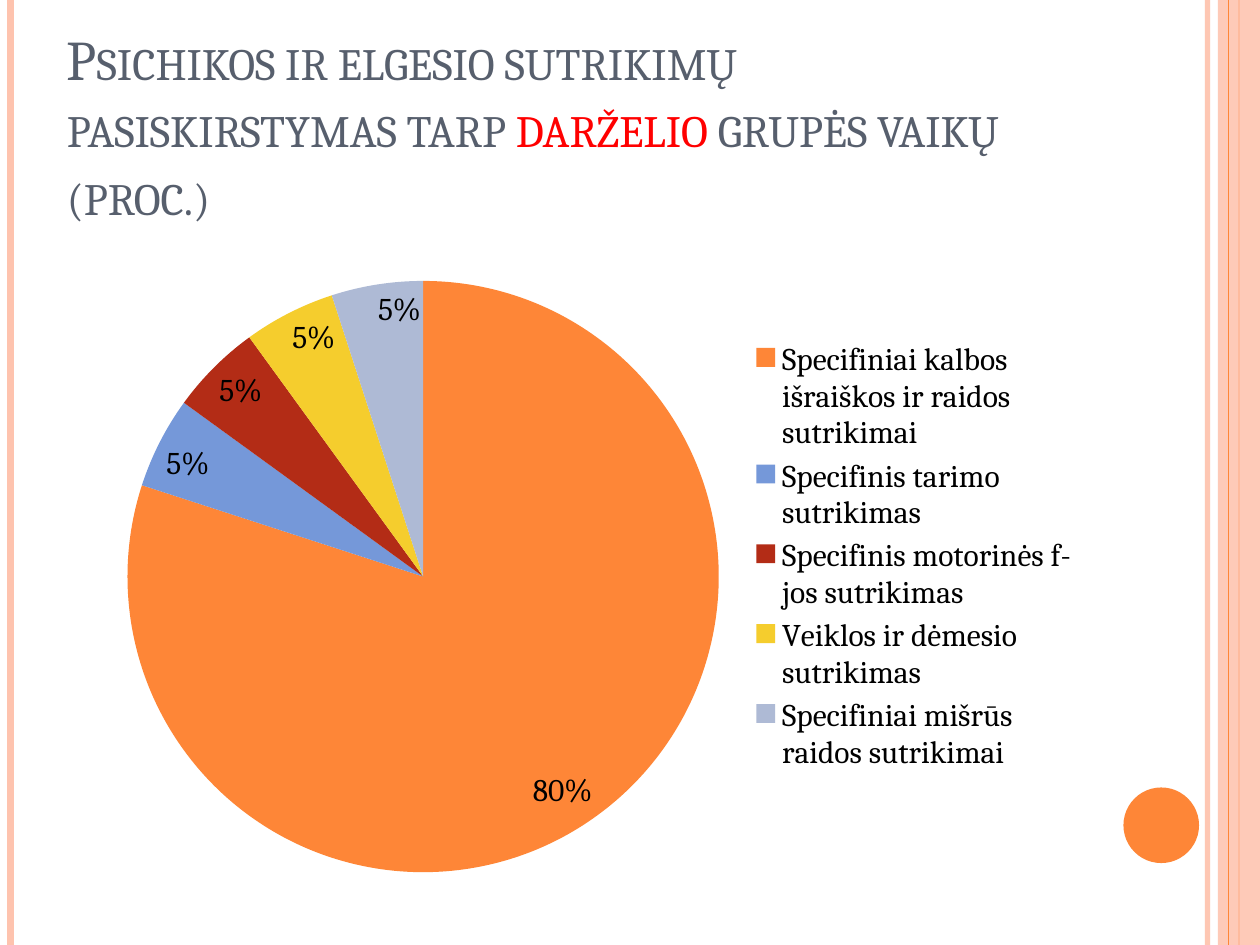
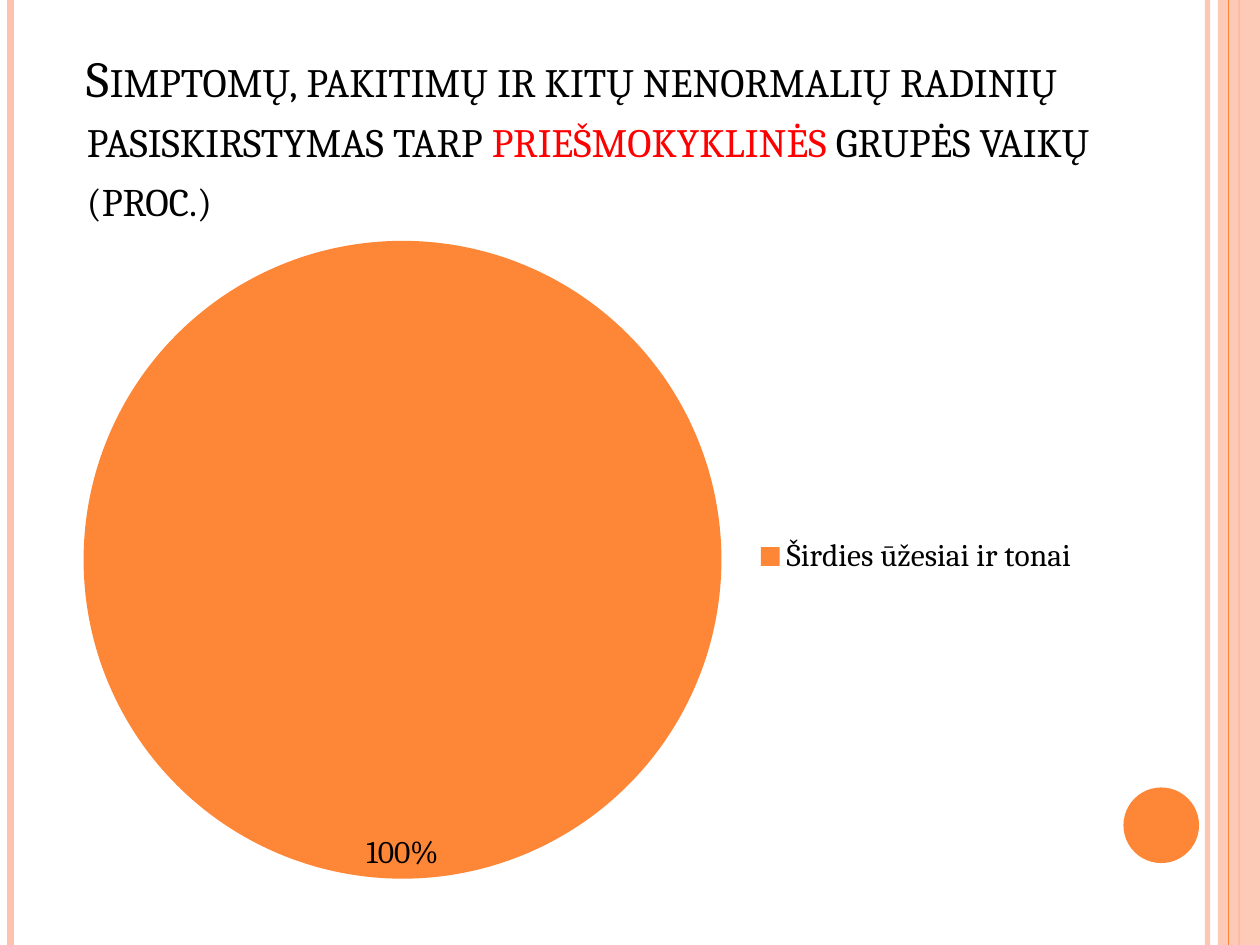
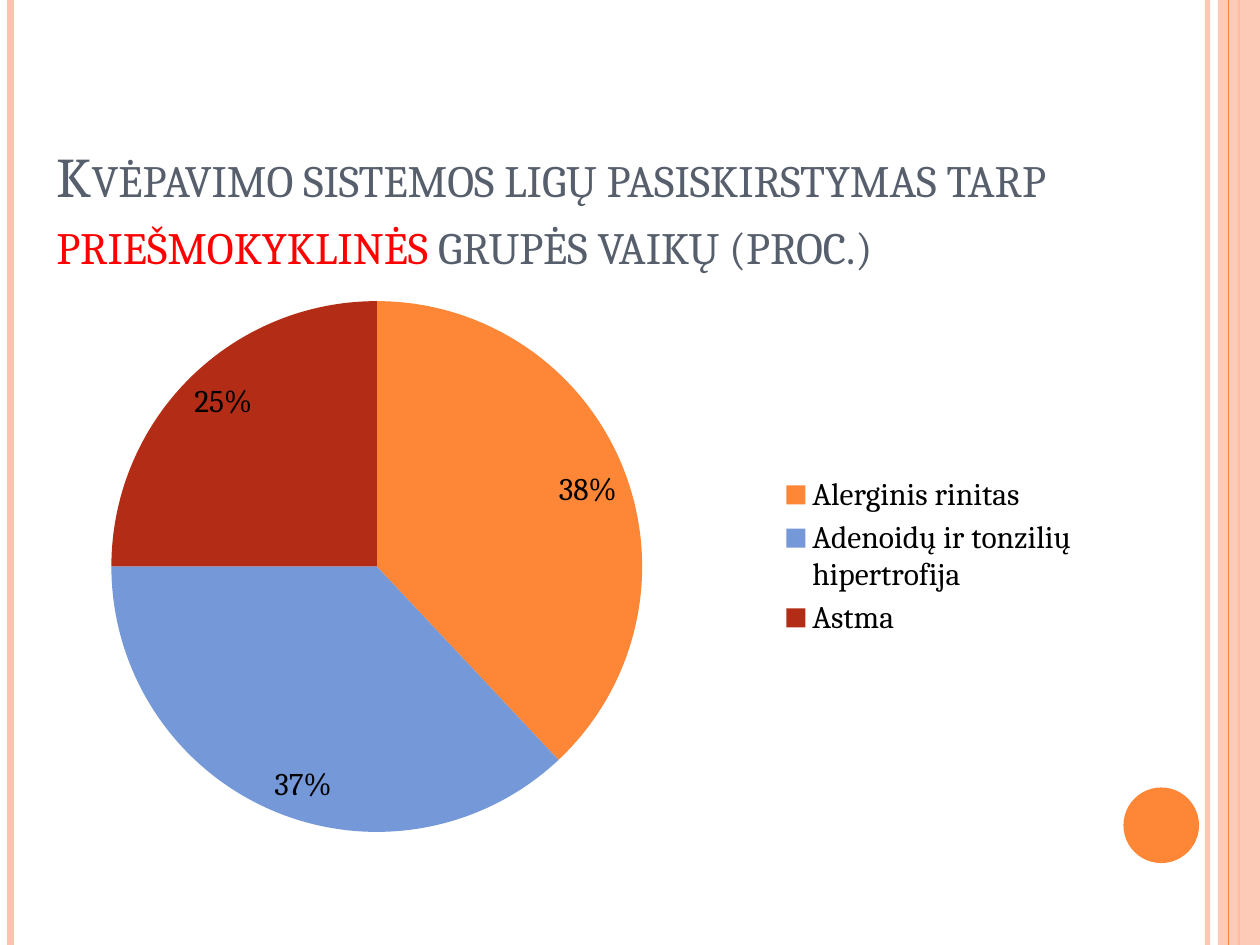
from lxml.etree import SubElement
from pptx import Presentation
from pptx.chart.data import CategoryChartData
from pptx.dml.color import RGBColor
from pptx.enum.chart import XL_CHART_TYPE, XL_LABEL_POSITION, XL_LEGEND_POSITION
from pptx.enum.shapes import MSO_CONNECTOR, MSO_SHAPE
from pptx.enum.text import MSO_ANCHOR, MSO_AUTO_SIZE, PP_ALIGN
from pptx.oxml import parse_xml
from pptx.oxml.ns import nsdecls, qn
from pptx.util import Pt

WIDE, HIGH = 720, 540
FONT = "Cambria"
PEACH, ORANGE = "FEC3AE", "FE8637"
SLATE, RED, BLACK = "575F6D", "FF0000", "000000"
SLICES = [ORANGE, "7598D9", "B32C16", "F5CD2D", "AEBAD5"]
CHART = (36, 126, 588, 384)

# x, colour, width, opacity in percent
LINES = [
    (690, PEACH, 3, 93),
    (6, PEACH, 4.5, 100),
    (708, ORANGE, 1.5, 100),
    (702, ORANGE, 0.75, 100),
]

# title: left, top and runs (text, colour, size); plot: x, y, w, h as shares
PAGES = [
    {
        "spot": (31, 43),
        "runs": [
            ("Psichikos ir elgesio sutrikimų pasiskirstymas tarp ", SLATE, 32),
            ("darželio ", RED, 32),
            ("grupės vaikų (proc.)", SLATE, 32),
        ],
        "data": {
            "Specifiniai kalbos išraiškos ir raidos sutrikimai": 0.8,
            "Specifinis tarimo sutrikimas": 0.05,
            "Specifinis motorinės f-jos sutrikimas": 0.05,
            "Veiklos ir dėmesio sutrikimas": 0.05,
            "Specifiniai mišrūs raidos sutrikimai": 0.05,
        },
        "plot": (0.06, 0.09, 0.58, 0.88),
    },
    {
        "spot": (42.5, 43),
        "runs": [
            ("Simptomų, pakitimų ir kitų nenormalių radinių pasiskirstymas tarp ",
             BLACK, 28.8),
            ("priešmokyklinės", RED, 28.8),
            (" grupės vaikų ", BLACK, 28.8),
            ("(proc.)", BLACK, 27.9),
        ],
        "data": {"Širdies ūžesiai ir tonai": 1},
        "plot": (0.02, 0.03, 0.62, 0.95),
    },
    {
        "spot": (25, 71.3),
        "runs": [
            ("Kvėpavimo sistemos ligų pasiskirstymas tarp ", SLATE, 32),
            ("priešmokyklinės", RED, 32),
            (" grupės vaikų (proc.)", SLATE, 32),
        ],
        "data": {
            "Alerginis rinitas": 0.38,
            "Adenoidų ir tonzilių hipertrofija": 0.37,
            "Astma": 0.25,
        },
        "plot": (0.01, 0.12, 0.59, 0.79),
    },
]


def put(obj, **vals):
    for name, val in vals.items():
        setattr(obj, name, val)


def paint(fill, color):
    fill.solid()
    fill.fore_color.rgb = RGBColor.from_string(color)


def style(font, color, size):
    put(font, name=FONT, size=Pt(size))
    font.color.rgb = RGBColor.from_string(color)


def fade(shape, share):
    for clr in shape.element.xpath("./p:spPr//a:srgbClr"):
        SubElement(clr, qn("a:alpha"), val=str(share * 1000))


def rule(shapes, x, color, width, share):
    line = shapes.add_connector(
        MSO_CONNECTOR.STRAIGHT, Pt(x), Pt(0), Pt(x), Pt(HIGH))
    line.line.width = Pt(width)
    paint(line.line.fill, color)
    if share < 100:
        fade(line, share)
    SubElement(line.element.spPr, qn("a:effectLst"))
    return line


def block(shapes, kind, box, color):
    shape = shapes.add_shape(kind, *map(Pt, box))
    shape.shadow.inherit = False
    paint(shape.fill, color)
    shape.line.fill.background()
    return shape


def frame(slide, master):
    """Draw the side bands and the dot, then move them to the master."""
    shapes = slide.shapes
    parts = [rule(shapes, *line) for line in LINES]
    band = block(shapes, MSO_SHAPE.RECTANGLE, (696, 0, 24, HIGH), PEACH)
    fade(band, 87)
    parts.insert(3, band)
    parts.append(block(shapes, MSO_SHAPE.OVAL, (642, 450, 43.2, 43.2), ORANGE))
    for num, part in enumerate(parts, 101):
        part.element.xpath(".//p:cNvPr")[0].set("id", str(num))
        master.shapes.element.append(part.element)


def head(slide, spot, runs):
    title = slide.shapes.title
    left, top = spot
    put(title, left=Pt(left), top=Pt(top), width=Pt(588), height=Pt(90))
    text = title.text_frame
    put(text, word_wrap=True, auto_size=MSO_AUTO_SIZE.NONE,
        vertical_anchor=MSO_ANCHOR.BOTTOM)
    para = text.paragraphs[0]
    para.alignment = PP_ALIGN.LEFT
    for words, color, size in runs:
        run = para.add_run()
        run.text = words
        style(run.font, color, size)
    for props in title.element.xpath(".//a:r/a:rPr"):
        props.set("cap", "small")


def place(chart, plot):
    """Fix the inner plot area at the given shares of the chart."""
    area = chart.element.xpath(".//c:plotArea")[0]
    for old in area.xpath("./c:layout"):
        area.remove(old)
    modes = '<c:layoutTarget val="inner"/><c:xMode val="edge"/><c:yMode val="edge"/>'
    sizes = "".join(f'<c:{key} val="{val}"/>' for key, val in zip("xywh", plot))
    area.insert(0, parse_xml(
        f"<c:layout {nsdecls('c')}><c:manualLayout>{modes}{sizes}"
        "</c:manualLayout></c:layout>"))


def pie(slide, box, data, plot):
    source = CategoryChartData(number_format="0%")
    source.categories = list(data)
    source.add_series("Series 1", list(data.values()))
    chart = slide.shapes.add_chart(
        XL_CHART_TYPE.PIE, *map(Pt, box), source).chart
    put(chart, has_title=False, has_legend=True)
    style(chart.font, BLACK, 18)
    put(chart.legend, position=XL_LEGEND_POSITION.RIGHT, include_in_layout=False)
    body = chart.plots[0]
    put(body, vary_by_categories=True, has_data_labels=True)
    put(body.data_labels, show_value=True, show_percentage=False,
        number_format="0%", number_format_is_linked=False,
        position=XL_LABEL_POSITION.INSIDE_END)
    for num, color in enumerate(SLICES[:len(data)]):
        point = body.series[0].points[num].format
        paint(point.fill, color)
        point.line.fill.background()
    place(chart, plot)


def main():
    prs = Presentation()
    put(prs, slide_width=Pt(WIDE), slide_height=Pt(HIGH))
    paint(prs.slide_master.background.fill, "FFFFFF")
    for num, page in enumerate(PAGES):
        slide = prs.slides.add_slide(prs.slide_layouts[5])
        if num == 0:
            frame(slide, prs.slide_master)
        head(slide, page["spot"], page["runs"])
        pie(slide, CHART, page["data"], page["plot"])
    prs.save("out.pptx")


if __name__ == "__main__":
    main()
